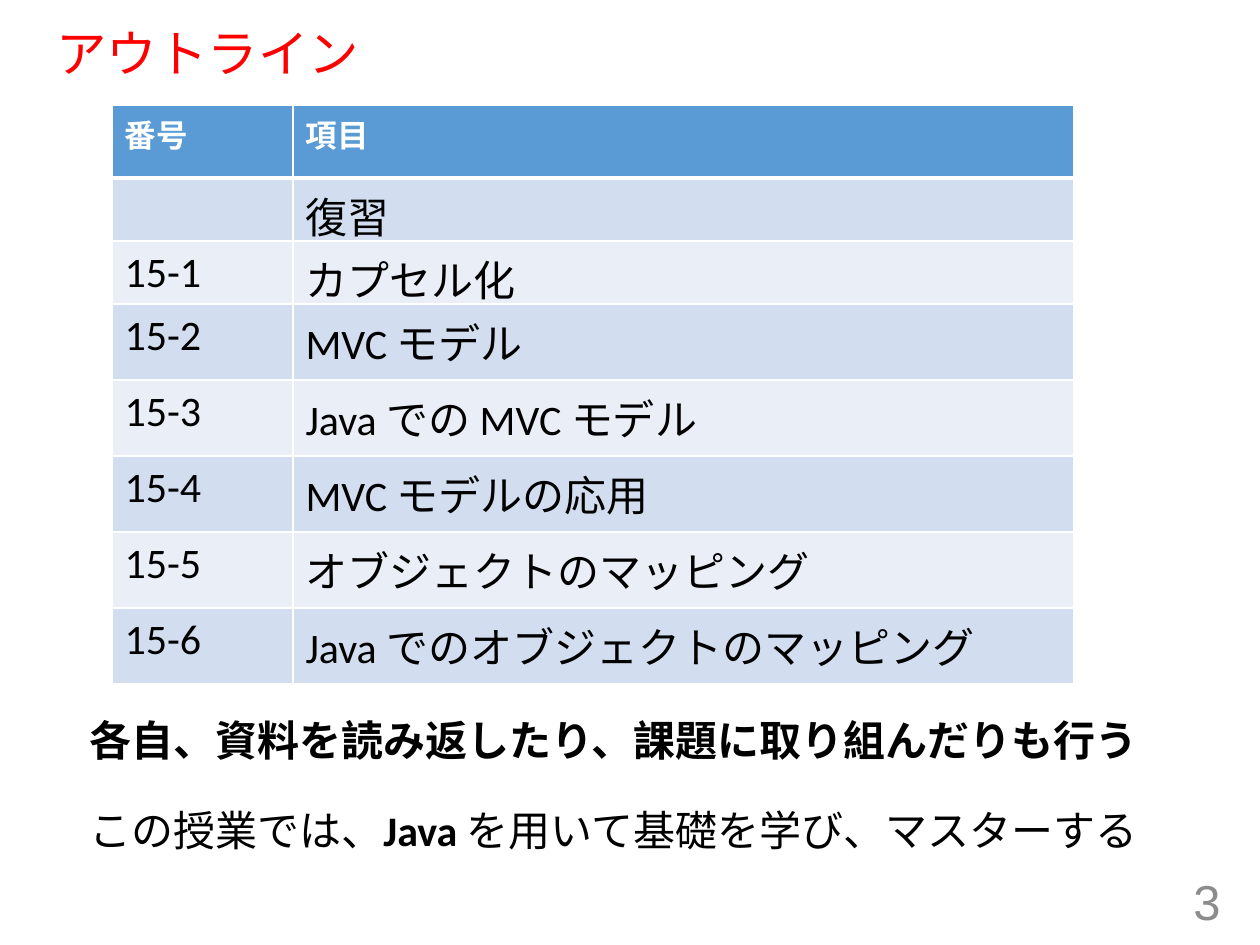
from lxml.etree import SubElement
from pptx import Presentation
from pptx.dml.color import RGBColor
from pptx.enum.text import MSO_ANCHOR as ANCHOR, PP_ALIGN as ALIGN
from pptx.oxml.ns import qn
from pptx.util import Emu, Pt

EMU_PER_PX = 914400 / 126
COLORS = {
    "title": "FF0000",
    "number": "8C8C8C",
    "text": "000000",
    "white": "FFFFFF",
    "header": "5B9BD5",
    "dark_band": "D2DEEF",
    "light_band": "EAEFF7",
}
TOPICS = [
    ("番号", "項目"),
    ("", "復習"),
    ("15-1", "カプセル化"),
    ("15-2", "MVC モデル"),
    ("15-3", "Java での MVC モデル"),
    ("15-4", "MVC モデルの応用"),
    ("15-5", "オブジェクトのマッピング"),
    ("15-6", "Java でのオブジェクトのマッピング"),
]
COL_WIDTHS = [181, 781]
ROW_HEIGHTS = [73, 59, 59] + [76] * 5


def px(n):
    return Emu(round(n * EMU_PER_PX))


def rgb(name):
    return RGBColor.from_string(COLORS[name])


class Deck:
    BODY = {"name": "Calibri", "size": Pt(24), "bold": False}

    def __init__(self, width, height):
        self.prs = Presentation()
        self.prs.slide_width, self.prs.slide_height = px(width), px(height)
        self.s = self.prs.slides.add_slide(self.prs.slide_layouts[6])

    def run(self, p, text, color="text", **style):
        r = p.add_run()
        r.text = text
        for key, value in {**self.BODY, **style}.items():
            setattr(r.font, key, value)
        r.font.color.rgb = rgb(color)

    def text(self, box, runs, anchor=ANCHOR.TOP, **para):
        """Add a text box; runs is a list of (text, style) pairs."""
        tf = self.s.shapes.add_textbox(*map(px, box)).text_frame
        tf.word_wrap = True
        tf.vertical_anchor = anchor
        p = tf.paragraphs[0]
        for key, value in para.items():
            setattr(p, key, value)
        for text, style in runs:
            self.run(p, text, **style)

    def borders(self, cell, **widths):
        """Draw white cell borders, widths in points by side."""
        tc_pr = cell._tc.get_or_add_tcPr()
        for side in "LRTB":
            ln = SubElement(tc_pr, qn(f"a:ln{side}"), w=str(Pt(widths.get(side, 1))))
            fill = SubElement(ln, qn("a:solidFill"))
            SubElement(fill, qn("a:srgbClr"), val=COLORS["white"])

    def table(self, left, top, rows, widths, heights):
        tbl = self.s.shapes.add_table(
            len(rows), len(widths),
            px(left), px(top), px(sum(widths)), px(sum(heights))).table
        for col, width in zip(tbl.columns, widths):
            col.width = px(width)
        for i, (row, height) in enumerate(zip(rows, heights)):
            tbl.rows[i].height = px(height)
            band = "dark_band" if i % 2 else "light_band"
            for j, text in enumerate(row):
                cell = tbl.cell(i, j)
                self.borders(cell, **{0: {"B": 3}, 1: {"T": 3}}.get(i, {}))
                cell.fill.solid()
                cell.fill.fore_color.rgb = rgb(band if i else "header")
                style = {} if i else {"color": "white", "size": Pt(18), "bold": True}
                if text:
                    self.run(cell.text_frame.paragraphs[0], text, **style)


def main():
    deck = Deck(1260, 945)
    deck.text((44, 24, 1166, 64),
              [("アウトライン", {"name": "Arial", "size": Pt(28.8), "color": "title"})],
              ANCHOR.MIDDLE, line_spacing=0.9)
    deck.text((949, 876, 284, 50),
              [("3", {"name": "Arial", "size": Pt(28), "color": "number"})],
              ANCHOR.MIDDLE, alignment=ALIGN.RIGHT)
    deck.table(112, 105, TOPICS, COL_WIDTHS, ROW_HEIGHTS)
    deck.text((77, 708, 1086, 63),
              [("各自、資料を読み返したり、課題に取り組んだりも行う", {"bold": True})])
    deck.text((77, 798, 1082, 63),
              [("この授業では、", {}), ("Java ", {"bold": True}),
               ("を用いて基礎を学び、マスターする", {})])
    deck.prs.save("out.pptx")


if __name__ == "__main__":
    main()
